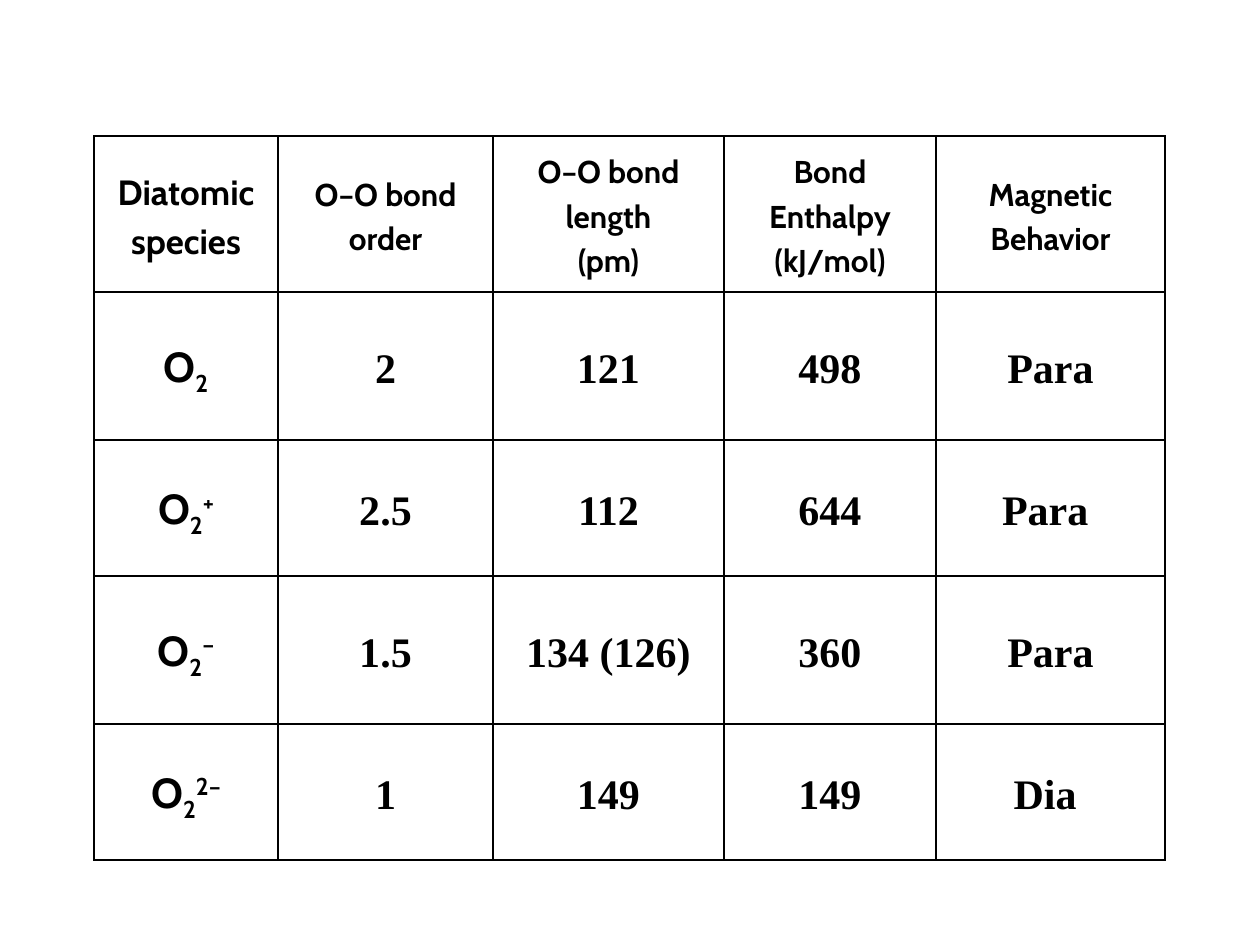
from lxml.etree import SubElement
from pptx import Presentation
from pptx.dml.color import RGBColor
from pptx.enum.text import MSO_ANCHOR, PP_ALIGN
from pptx.oxml.ns import qn
from pptx.util import Emu, Pt

BLACK = RGBColor(0, 0, 0)
HEAD_FONT, VALUE_FONT = "Cabin", "Times New Roman"
HEADERS = [
    ("Diatomic species", 20),
    ("O–O bond order", 18),
    ("O–O bond length\n(pm)", 18),
    ("Bond Enthalpy\n(kJ/mol)", 18),
    ("Magnetic Behavior", 18),
]
# charge of the O2 species, then its values
SPECIES = [
    ("", "2", "121", "498", "Para"),
    ("+", "2.5", "112", "644", "Para "),
    ("–", "1.5", "134 (126)", "360", "Para"),
    ("2–", "1", "149", "149", "Dia "),
]
LEFT, TOP = 94, 136
COL_WIDTHS = [184, 215, 231, 212, 229]
ROW_HEIGHTS = [156, 148, 136, 148, 136]
SUBSCRIPT, SUPERSCRIPT = -25000, 30000


def px(n):
    return Emu(round(n * 914400 / 126))


def add_borders(cell):
    tcPr = cell._tc.get_or_add_tcPr()
    for side in ("lnL", "lnR", "lnT", "lnB"):
        ln = SubElement(tcPr, qn(f"a:{side}"), w=str(Pt(1)))
        fill = SubElement(ln, qn("a:solidFill"))
        SubElement(fill, qn("a:srgbClr"), val=str(BLACK))


def format_cell(cell, font, size):
    add_borders(cell)
    cell.fill.background()
    cell.vertical_anchor = MSO_ANCHOR.MIDDLE
    cell.margin_left = cell.margin_right = px(9)
    cell.margin_top = cell.margin_bottom = 0
    for p in cell.text_frame.paragraphs:
        p.alignment = PP_ALIGN.CENTER
        p.line_spacing = 1.15
        for r in p.runs:
            r.font.name = font
            r.font.size = Pt(size)
            r.font.bold = True
            r.font.color.rgb = BLACK


def write_species(cell, charge):
    p = cell.text_frame.paragraphs[0]
    for text, baseline in (("O", 0), ("2", SUBSCRIPT), (charge, SUPERSCRIPT)):
        if text:
            r = p.add_run()
            r.text = text
            r.font._element.set("baseline", str(baseline))


prs = Presentation()
prs.slide_width, prs.slide_height = px(1260), px(945)
slide = prs.slides.add_slide(prs.slide_layouts[6])
table = slide.shapes.add_table(
    len(ROW_HEIGHTS), len(COL_WIDTHS), px(LEFT), px(TOP),
    px(sum(COL_WIDTHS)), px(sum(ROW_HEIGHTS))).table
table.first_row = table.horz_banding = False
for column, width in zip(table.columns, COL_WIDTHS):
    column.width = px(width)
for row, height in zip(table.rows, ROW_HEIGHTS):
    row.height = px(height)

for col, (text, size) in enumerate(HEADERS):
    cell = table.cell(0, col)
    cell.text_frame.text = text
    format_cell(cell, HEAD_FONT, size)

for row, (charge, *values) in enumerate(SPECIES, 1):
    cell = table.cell(row, 0)
    write_species(cell, charge)
    format_cell(cell, HEAD_FONT, 24)
    for col, value in enumerate(values, 1):
        cell = table.cell(row, col)
        cell.text_frame.text = value
        format_cell(cell, VALUE_FONT, 24)

prs.save("out.pptx")
